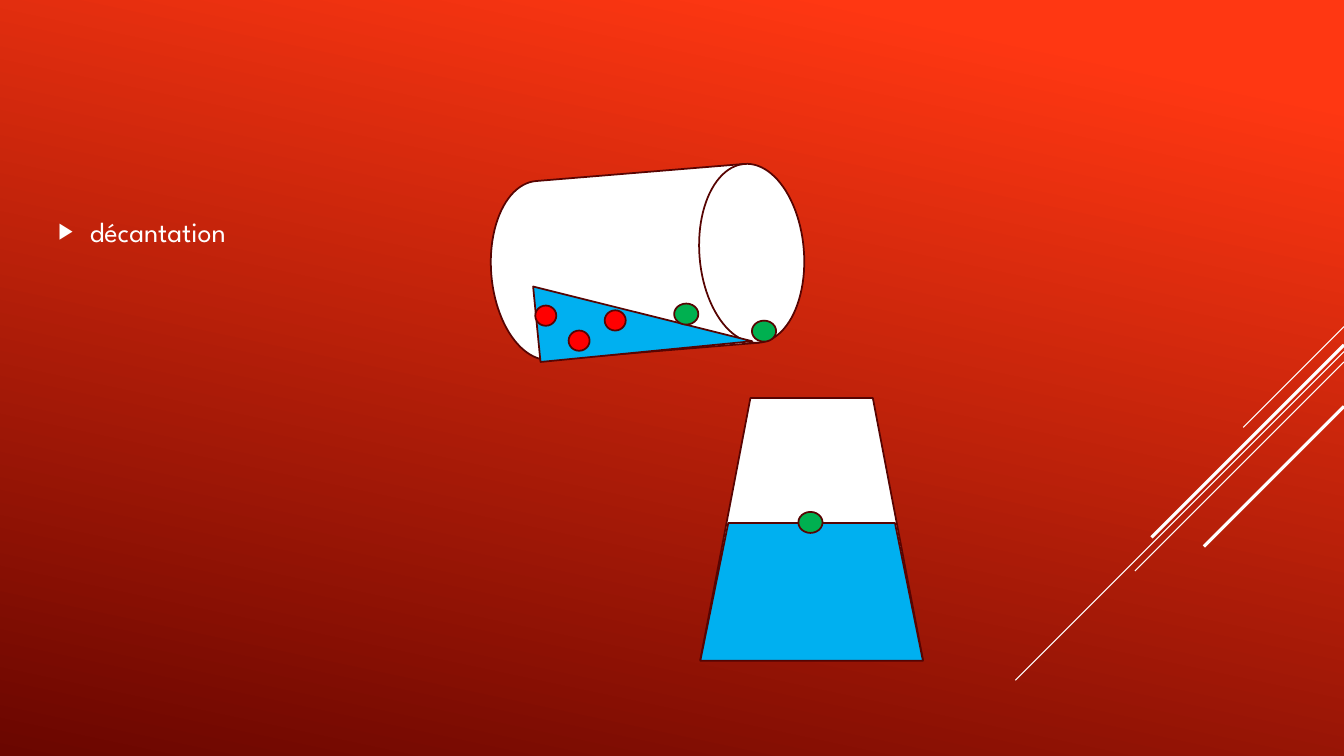
from lxml import etree
from pptx import Presentation
from pptx import util as u
from pptx.dml.color import RGBColor
from pptx.enum import shapes, text
from pptx.oxml import ns

WHITE = RGBColor(0xFF, 0xFF, 0xFF)
WATER = RGBColor(0x00, 0xB0, 0xF0)
RED = RGBColor(0xFF, 0x00, 0x00)
GREEN = RGBColor(0x00, 0xB0, 0x50)
OUTLINE = RGBColor(0x57, 0x04, 0x02)
BACK_LIGHT = RGBColor(0xFF, 0x37, 0x12)
BACK_DARK = RGBColor(0x6A, 0x06, 0x00)
FONT = "League Spartan"
KIND = shapes.MSO_SHAPE

# Content, lengths in cm
WIDTH, HEIGHT = 33.87, 19.05
BULLETS = ["décantation"]
BODY_BOX = (1.22, 0.81, 23.7, 10.03)
# Diagonals from the right edge: start height, reach, line width in points
DIAGONALS = [
    (8.23, 2.54, 0.75),
    (8.86, 8.28, 0.75),
    (9.12, 5.27, 0.75),
    (8.69, 4.85, 2.25),
    (10.24, 3.53, 2.25),
]
# Vessels and liquid: kind, box, fill, rotation, adjustment
VESSELS = [
    (KIND.TRAPEZOID, (17.65, 10.03, 5.61, 6.6), WHITE, 0, 0.225),
    (KIND.TRAPEZOID, (17.65, 13.18, 5.61, 3.47), WATER, 0, 0.203),
    (KIND.FLOWCHART_DIRECT_ACCESS_STORAGE, (12.37, 4.34, 7.9, 4.52), WHITE, 355.3, None),
    (KIND.ISOSCELES_TRIANGLE, (15.24, 5.23, 1.91, 5.36), WATER, 84.4, 1),
]
# Particles: fill, size, corners
PARTICLES = [
    (RED, (0.53, 0.51), [(13.49, 7.7), (14.33, 8.33), (15.24, 7.82)]),
    (GREEN, (0.61, 0.53), [(16.99, 7.65), (20.12, 12.9), (18.95, 8.08)]),
]


def cm(values):
    return [u.Cm(value) for value in values]


def add_diagonal(page, top, reach, width):
    line = page.shapes.add_connector(
        shapes.MSO_CONNECTOR.STRAIGHT, *cm((WIDTH, top, WIDTH - reach, top + reach)))
    line.line.color.rgb = WHITE
    line.line.width = u.Pt(width)
    etree.SubElement(line._element.spPr, ns.qn("a:effectLst"))


def add_part(page, kind, box, fill, rotation=0, adjustment=None):
    part = page.shapes.add_shape(kind, *cm(box))
    part.shadow.inherit = False
    part.fill.solid()
    part.fill.fore_color.rgb = fill
    part.line.color.rgb = OUTLINE
    part.line.width = u.Pt(1.25)
    part.rotation = rotation
    if adjustment is not None:
        part.adjustments[0] = adjustment


def add_bullet(para):
    props = para._p.get_or_add_pPr()
    props.set("marL", str(u.Cm(0.79)))
    props.set("indent", str(-u.Cm(0.79)))
    colour = etree.SubElement(props, ns.qn("a:buClr"))
    etree.SubElement(colour, ns.qn("a:srgbClr"), val=str(WHITE))
    etree.SubElement(props, ns.qn("a:buSzPct"), val="80000")
    etree.SubElement(props, ns.qn("a:buFont"), typeface="Arial")
    etree.SubElement(props, ns.qn("a:buChar"), char="▶")


def fill_body(body):
    body.left, body.top, body.width, body.height = cm(BODY_BOX)
    frame = body.text_frame
    frame.vertical_anchor = text.MSO_ANCHOR.MIDDLE
    frame.word_wrap = True
    for index, wording in enumerate(BULLETS):
        para = frame.add_paragraph() if index else frame.paragraphs[0]
        add_bullet(para)
        para.space_before = u.Pt(4 if index else 0)
        para.space_after = u.Pt(6)
        span = para.add_run()
        span.text = wording
        span.font.name = FONT
        span.font.size = u.Pt(20)
        span.font.color.rgb = WHITE


def main():
    deck = Presentation()
    deck.slide_width, deck.slide_height = cm((WIDTH, HEIGHT))
    page = deck.slides.add_slide(deck.slide_layouts[1])

    # Background
    back = page.background.fill
    back.gradient()
    back.gradient_angle = 258
    for stop, position, colour in zip(
            back.gradient_stops, (0.1, 1), (BACK_LIGHT, BACK_DARK)):
        stop.position = position
        stop.color.rgb = colour

    # List
    title = page.shapes.title._element
    title.getparent().remove(title)
    fill_body(page.placeholders[1])

    # Decoration
    for diagonal in DIAGONALS:
        add_diagonal(page, *diagonal)

    # Decanting drawing
    for vessel in VESSELS:
        add_part(page, *vessel)
    for fill, size, corners in PARTICLES:
        for corner in corners:
            add_part(page, KIND.OVAL, corner + size, fill)

    deck.save("out.pptx")


if __name__ == "__main__":
    main()
